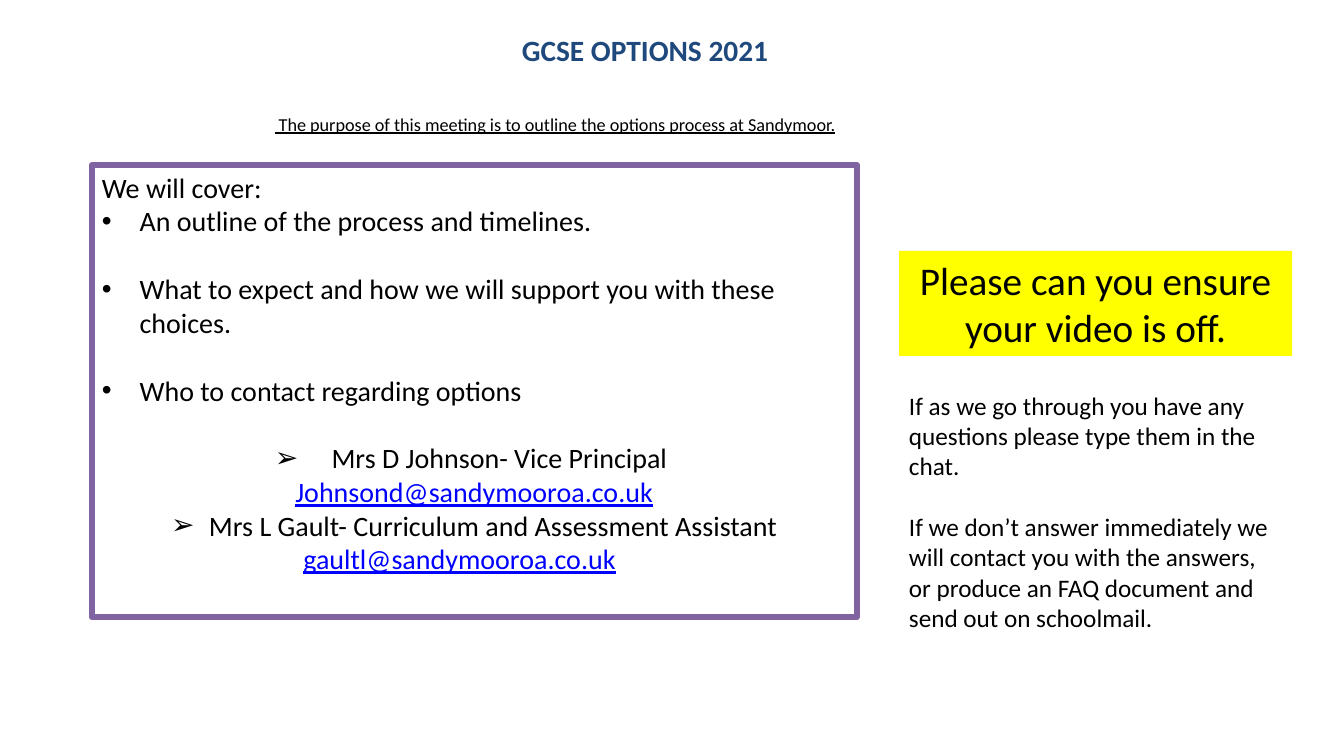
"""Build the GCSE options welcome slide."""
from dataclasses import dataclass

import lxml.etree
import pptx
import pptx.dml.color
import pptx.enum.shapes
import pptx.enum.text
import pptx.oxml.ns
import pptx.util

Pt = pptx.util.Pt
RGBColor = pptx.dml.color.RGBColor
Align = pptx.enum.text.PP_ALIGN
Anchor = pptx.enum.text.MSO_ANCHOR

NAVY = RGBColor(0x1F, 0x49, 0x7D)
BLACK = RGBColor(0, 0, 0)
BLUE = RGBColor(0, 0, 0xFF)
PURPLE = RGBColor(0x80, 0x64, 0xA2)
YELLOW = RGBColor(0xFF, 0xFF, 0)
FONT = "Calibri"


@dataclass(frozen=True)
class Item:
    text: str
    mark: str = ""
    left: float = 0
    hang: float = 0
    gap: float = 0
    align: Align = Align.LEFT
    mail: bool = False


ITEMS = [
    Item("We will cover:"),
    Item("An outline of the process and timelines.", "•", 27, 27),
    Item("What to expect and how we will support you with these choices.", "•", 27, 27, 24.4),
    Item("Who to contact regarding options", "•", 27, 27, 24.4),
    Item("Mrs D Johnson- Vice Principal ", "➢", 40.5, 40.5, 24.4, Align.CENTER),
    Item("Johnsond@sandymooroa.co.uk", align=Align.CENTER, mail=True),
    Item("Mrs L Gault- Curriculum and Assessment Assistant", "➢", 27, 27, align=Align.CENTER),
    Item("gaultl@sandymooroa.co.uk", left=144, mail=True),
]
NOTES = [
    Item("If as we go through you have any questions please type them in the chat."),
    Item("If we don’t answer immediately we will contact you with the answers, "
         "or produce an FAQ document and send out on schoolmail.", gap=22),
]


def place(shape, left: float, top: float, width: float, height: float,
          anchor: Anchor = Anchor.TOP, inset: float = 3.6):
    shape.left, shape.top = Pt(left), Pt(top)
    shape.width, shape.height = Pt(width), Pt(height)
    frame = shape.text_frame
    frame.word_wrap = True
    frame.auto_size = pptx.enum.text.MSO_AUTO_SIZE.NONE
    frame.vertical_anchor = anchor
    frame.margin_left = frame.margin_right = Pt(7.2)
    frame.margin_top, frame.margin_bottom = Pt(inset), Pt(3.6)
    return frame


def write(frame, text: str, *, size: float, color: RGBColor = BLACK, bold: bool = False,
          under: bool = False, align: Align = Align.LEFT, mark: str = "",
          left: float = 0, hang: float = 0, gap: float = 0) -> None:
    first = frame.paragraphs[0]
    para = frame.add_paragraph() if first.runs else first
    props = para._p.get_or_add_pPr()
    props.set("marL", str(Pt(left)))
    props.set("indent", str(-Pt(hang)))
    name = pptx.oxml.ns.qn
    if mark:
        lxml.etree.SubElement(props, name("a:buFont")).set("typeface", "Arial")
        lxml.etree.SubElement(props, name("a:buChar")).set("char", mark)
    else:
        lxml.etree.SubElement(props, name("a:buNone"))
    para.alignment = align
    para.space_before = Pt(gap)
    run = para.add_run()
    run.text = text
    font = run.font
    font.name, font.size, font.bold, font.underline = FONT, Pt(size), bold, under
    font.color.rgb = color


def fill_list(frame, items: list[Item], size: float) -> None:
    for item in items:
        write(frame, item.text, size=size, color=BLUE if item.mail else BLACK,
              under=item.mail, align=item.align, mark=item.mark,
              left=item.left, hang=item.hang, gap=item.gap)


def main() -> None:
    deck = pptx.Presentation()
    deck.slide_width, deck.slide_height = Pt(960), Pt(540)
    slide = deck.slides.add_slide(deck.slide_layouts[1])
    shapes = slide.shapes

    title = place(shapes.title, 23, 10, 875.5, 41.8, Anchor.BOTTOM)
    write(title, "GCSE OPTIONS 2021", size=21, color=NAVY, bold=True, align=Align.CENTER)

    aim = place(shapes.add_textbox(0, 0, 0, 0), 23, 61.2, 746.6, 46.8, inset=19.5)
    write(aim, " The purpose of this meeting is to outline the options process at Sandymoor.",
          size=13, under=True, align=Align.CENTER)

    body = slide.placeholders[1]
    body.line.color.rgb = PURPLE
    body.line.width = Pt(4.5)
    fill_list(place(body, 65.5, 118.1, 546.5, 322.6), ITEMS, 20)

    alert = shapes.add_shape(pptx.enum.shapes.MSO_SHAPE.RECTANGLE, 0, 0, 0, 0)
    alert.shadow.inherit = False
    alert.fill.solid()
    alert.fill.fore_color.rgb = YELLOW
    alert.line.fill.background()
    write(place(alert, 642.2, 179.3, 280.8, 74.9), "Please can you ensure your video is off.",
          size=28, align=Align.CENTER)

    notes = place(shapes.add_textbox(0, 0, 0, 0), 642.2, 275, 274.3, 181.4)
    fill_list(notes, NOTES, 18)

    deck.save("out.pptx")


if __name__ == "__main__":
    main()
